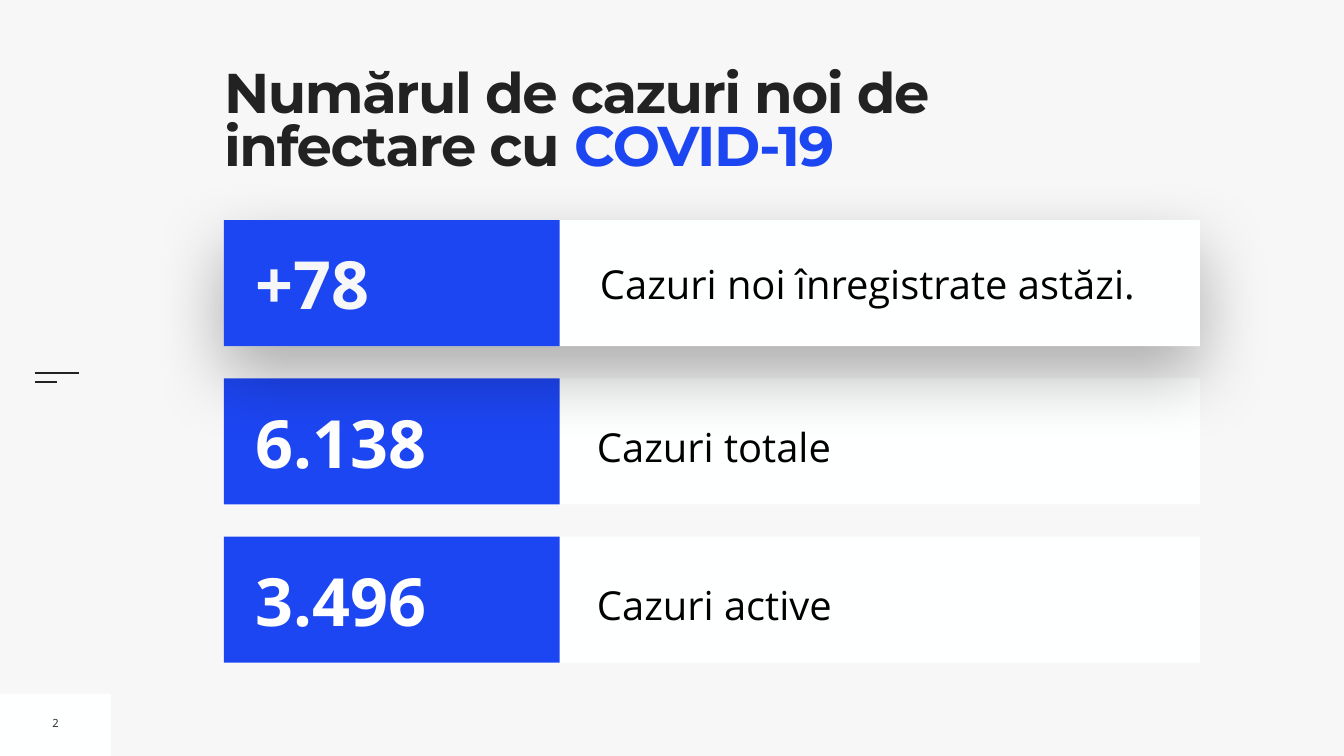
from lxml import etree
from pptx import Presentation
from pptx.dml.color import RGBColor
from pptx.enum import shapes, text
from pptx.oxml import parse_xml
from pptx.oxml.ns import nsdecls, qn
from pptx.util import Pt

BLUE, WHITE, DARK, PALE, BLACK = "1D46F3", "FEFFFF", "222222", "F7F7F7", "000000"
BODY_FONT, TITLE_FONT = "Open Sans", "Montserrat"


def color(hex_value):
    return RGBColor.from_string(hex_value)


def add_panel(slide, box, fill):
    panel = slide.shapes.add_shape(shapes.MSO_SHAPE.RECTANGLE, *map(Pt, box))
    panel.shadow.inherit = False
    panel.fill.solid()
    panel.fill.fore_color.rgb = color(fill)
    panel.line.fill.background()
    return panel


def add_soft_shadow(shape):
    properties = shape._element.spPr
    properties.remove(properties.find(qn("a:effectLst")))
    properties.append(parse_xml(
        f'<a:effectLst {nsdecls("a")}><a:outerShdw blurRad="{Pt(100)}" dist="{Pt(40)}" '
        'dir="5400000" rotWithShape="0"><a:srgbClr val="000000"><a:alpha val="30000"/>'
        '</a:srgbClr></a:outerShdw></a:effectLst>'))


def format_run(run, size, fill, font=BODY_FONT, bold=False):
    run.font.size = Pt(size)
    run.font.name = font
    run.font.bold = bold
    run.font.color.rgb = color(fill)


def set_margins(frame, margin):
    frame.margin_left = frame.margin_right = Pt(margin)
    frame.margin_top = frame.margin_bottom = Pt(margin)


def add_text(slide, box, content, size, fill, bold=False, margin=7.2, wrap=True):
    frame = slide.shapes.add_textbox(*map(Pt, box)).text_frame
    frame.word_wrap = wrap
    frame.vertical_anchor = text.MSO_ANCHOR.MIDDLE
    set_margins(frame, margin)
    frame.text = content
    paragraph = frame.paragraphs[0]
    format_run(paragraph.runs[0], size, fill, bold=bold)
    return paragraph


def add_title(slide, box, lines):
    title = slide.shapes.title
    title.left, title.top, title.width, title.height = map(Pt, box)
    frame = title.text_frame
    frame.auto_size = text.MSO_AUTO_SIZE.NONE
    frame.vertical_anchor = text.MSO_ANCHOR.TOP
    set_margins(frame, 0)
    for index, line in enumerate(lines):
        paragraph = frame.add_paragraph() if index else frame.paragraphs[0]
        paragraph.alignment = text.PP_ALIGN.LEFT
        paragraph.line_spacing = 0.8
        for content, fill in line:
            run = paragraph.add_run()
            run.text = content
            format_run(run, 80, fill, TITLE_FONT, bold=True)
            run.font._element.set("spc", "-200")


def add_card(slide, box, number, label, highlighted=False):
    left, top, width, height = box
    panel = add_panel(slide, box, WHITE)
    if highlighted:
        add_soft_shadow(panel)
        add_text(slide, (left + 530, top + 48, 847, 84), label, 57, BLACK)
    else:
        paragraph = add_text(slide, (left + 532.8, top + 46, 834, 81), label, 57, BLACK, margin=0)
        paragraph.line_spacing = 1.3
        paragraph.space_before = Pt(20)
    # Number block
    add_panel(slide, (left, top, 479.5, height), BLUE)
    add_text(slide, (left + 38, top + 25, 434, 130), number, 95,
             PALE if highlighted else "FFFFFF", bold=True)


def add_side_mark(slide, left, top):
    for row, length in enumerate((63, 31.5)):
        y = Pt(top + row * 12.5)
        line = slide.shapes.add_connector(
            shapes.MSO_CONNECTOR.STRAIGHT, Pt(left), y, Pt(left + length), y)
        line.line.color.rgb = color(DARK)
        line.line.width = Pt(3)
        etree.SubElement(line._element.spPr, qn("a:effectLst"))


def add_page_number(slide, box, number):
    add_panel(slide, box, WHITE)
    left, top, width, height = box
    paragraph = add_text(slide, (left + 67, top + 24, 24.5, 37), number, 16, DARK, wrap=False)
    paragraph.alignment = text.PP_ALIGN.CENTER


def main():
    presentation = Presentation()
    presentation.slide_width, presentation.slide_height = Pt(1920), Pt(1080)
    slide = presentation.slides.add_slide(presentation.slide_layouts[5])
    slide.background.fill.solid()
    slide.background.fill.fore_color.rgb = color(PALE)

    # Page furniture
    add_page_number(slide, (0, 991, 158.5, 89), "2")
    add_side_mark(slide, 49.7, 533.5)

    add_title(slide, (320, 100, 1441, 197), [
        [("Numărul de cazuri noi de", DARK)],
        [("infectare cu ", DARK), ("COVID-19", BLUE)],
    ])

    # Cards: the second goes first, so that the shadow of the top one falls on it
    cards = [
        (1, "6.138", "Cazuri totale"),
        (0, "+78", "Cazuri noi înregistrate astăzi."),
        (2, "3.496", "Cazuri active"),
    ]
    for row, number, label in cards:
        add_card(slide, (320, 314.6 + row * 226.1, 1394, 180), number, label, row == 0)

    presentation.save("out.pptx")


if __name__ == "__main__":
    main()
